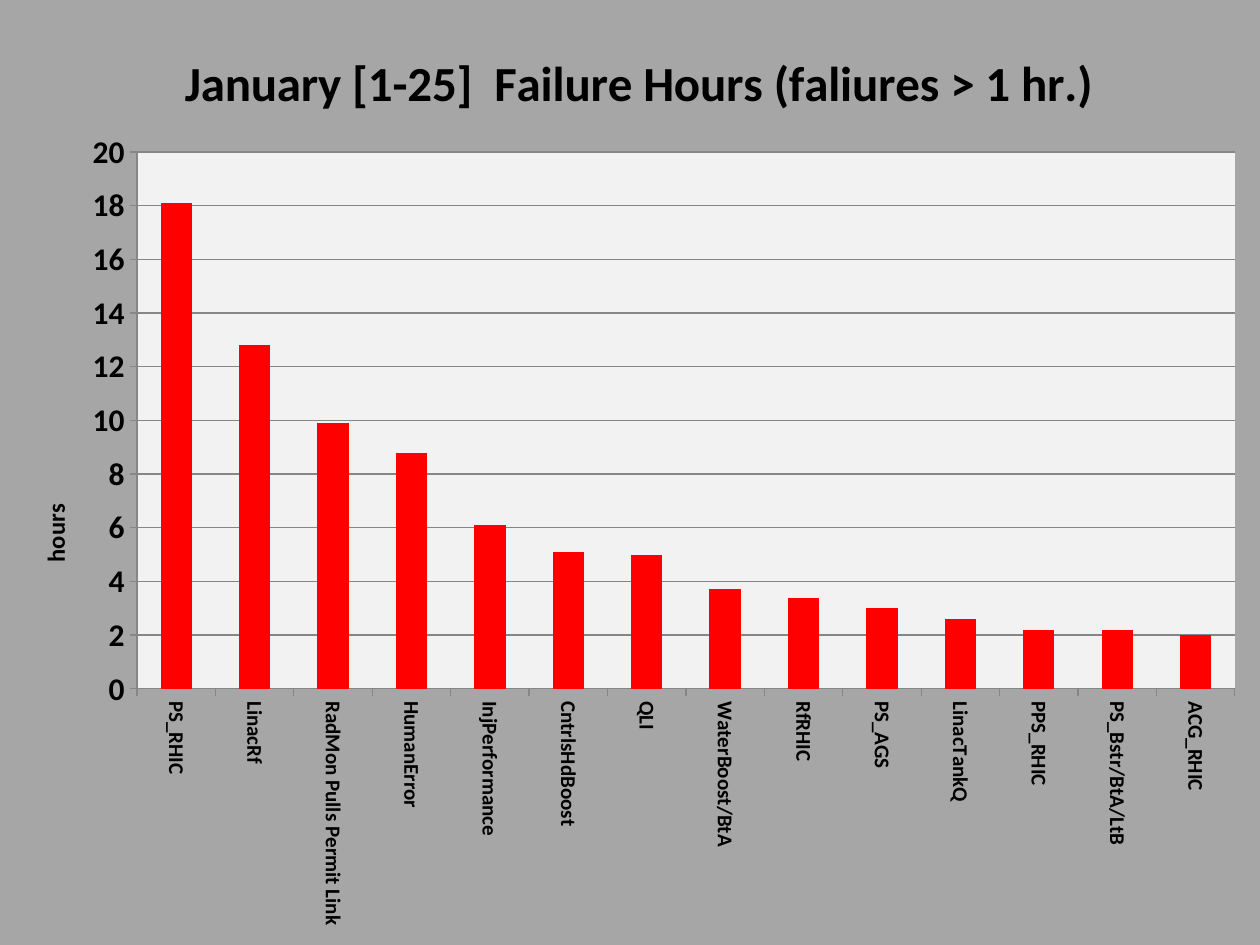
from typing import NamedTuple

from lxml import etree
from pptx import Presentation
from pptx.chart.data import CategoryChartData
from pptx.dml.color import RGBColor
from pptx.enum.chart import XL_CHART_TYPE, XL_TICK_MARK
from pptx.oxml import parse_xml
from pptx.oxml.ns import nsdecls, qn
from pptx.util import Pt

COLUMN = XL_CHART_TYPE.COLUMN_CLUSTERED
OUTSIDE = XL_TICK_MARK.OUTSIDE
SCALE = 7257.14
WIDTH, HEIGHT = 1260, 945
FACE = "Calibri"
BLACK, GREY, PALE, RED, LINE = "000000", "A6A6A6", "F2F2F2", "FF0000", "868686"


class Cause(NamedTuple):
    name: str
    hours: float


class Box(NamedTuple):
    left: int
    top: int
    width: int = 0
    height: int = 0


CAUSES = [
    Cause("PS_RHIC", 18.1),
    Cause("LinacRf", 12.8),
    Cause("RadMon Pulls Permit Link", 9.9),
    Cause("HumanError", 8.8),
    Cause("InjPerformance", 6.1),
    Cause("CntrlsHdBoost", 5.1),
    Cause("QLI", 5),
    Cause("WaterBoost/BtA", 3.7),
    Cause("RfRHIC", 3.4),
    Cause("PS_AGS", 3),
    Cause("LinacTankQ", 2.6),
    Cause("PPS_RHIC", 2.2),
    Cause("PS_Bstr/BtA/LtB", 2.2),
    Cause("ACG_RHIC", 2),
]


def px(size: int) -> int:
    return round(size * SCALE)


def tint(code: str) -> RGBColor:
    return RGBColor.from_string(code)


def style(font, size: int) -> None:
    font.name = FACE
    font.size = Pt(size)
    font.bold = True
    font.color.rgb = tint(BLACK)


def label(owner, text: str, size: int) -> None:
    frame = owner.text_frame
    frame.text = text
    style(frame.paragraphs[0].runs[0].font, size)


def place(node, box: Box, index: int, inner: bool = False) -> None:
    for old in node.findall(qn("c:layout")):
        node.remove(old)
    layout = etree.Element(qn("c:layout"))
    manual = etree.SubElement(layout, qn("c:manualLayout"))
    parts = [("xMode", "edge"), ("yMode", "edge"),
             ("x", box.left / WIDTH), ("y", box.top / HEIGHT)]
    if inner:
        parts.insert(0, ("layoutTarget", "inner"))
        parts += [("w", box.width / WIDTH), ("h", box.height / HEIGHT)]
    for tag, value in parts:
        etree.SubElement(manual, qn(f"c:{tag}")).set("val", str(value))
    node.insert(index, layout)


def panel(code: str):
    return parse_xml(
        f'<c:spPr {nsdecls("c", "a")}><a:solidFill><a:srgbClr val="{code}"/>'
        "</a:solidFill><a:ln><a:noFill/></a:ln></c:spPr>"
    )


def turn(node, angle: int) -> None:
    body = next(node.iter(qn("a:bodyPr")))
    body.set("rot", str(angle * 60000))
    body.set("vert", "horz")


def rule(line) -> None:
    line.color.rgb = tint(LINE)
    line.width = Pt(0.75)


def dress(axis, size: int) -> None:
    style(axis.tick_labels.font, size)
    axis.major_tick_mark = OUTSIDE
    rule(axis.format.line)


def draw(slide) -> None:
    data = CategoryChartData()
    data.categories = [cause.name for cause in CAUSES]
    data.add_series("Series 1", [cause.hours for cause in CAUSES])
    frame = slide.shapes.add_chart(COLUMN, 0, 0, px(WIDTH), px(HEIGHT), data)
    chart = frame.chart
    chart.has_legend = False
    chart.font.name = FACE
    chart.font.size = Pt(10)
    chart.font.color.rgb = tint(BLACK)

    title = chart.chart_title
    label(title, "January [1-25]  Failure Hours (faliures > 1 hr.)", 28)
    title.include_in_layout = False
    place(title._element, Box(176, 41), 1)

    names = chart.category_axis
    dress(names, 12)
    turn(names._element.find(qn("c:txPr")), 90)

    hours = chart.value_axis
    dress(hours, 18)
    hours.minimum_scale = 0
    hours.maximum_scale = 20
    hours.major_unit = 2
    hours.has_major_gridlines = True
    rule(hours.major_gridlines.format.line)
    label(hours.axis_title, "hours", 14)
    turn(hours.axis_title._element, -90)
    place(hours.axis_title._element, Box(34, 499), 1)

    plot = chart.plots[0]
    plot.gap_width = 150
    plot.vary_by_categories = False
    fill = plot.series[0].format.fill
    fill.solid()
    fill.fore_color.rgb = tint(RED)

    space = chart._chartSpace
    area = space.find(qn("c:chart")).find(qn("c:plotArea"))
    place(area, Box(137, 152, 1098, 537), 0, True)
    area.append(panel(PALE))
    space.find(qn("c:chart")).addnext(panel(GREY))


def main() -> None:
    deck = Presentation()
    deck.slide_width = px(WIDTH)
    deck.slide_height = px(HEIGHT)
    draw(deck.slides.add_slide(deck.slide_layouts[6]))
    deck.save("out.pptx")


if __name__ == "__main__":
    main()
